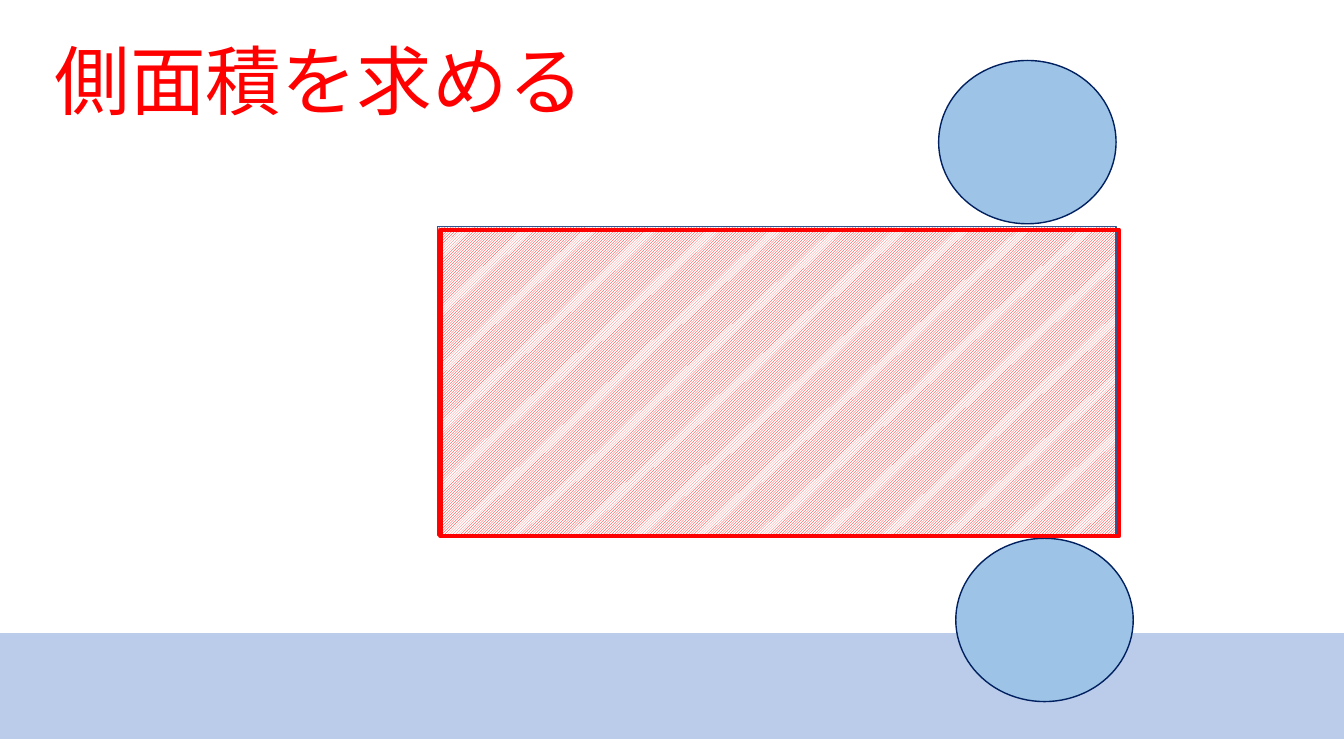
from dataclasses import dataclass

from lxml.etree import SubElement
from pptx import Presentation
from pptx.dml.color import RGBColor
from pptx.enum.dml import MSO_PATTERN
from pptx.enum.shapes import MSO_SHAPE as Shape
from pptx.enum.text import MSO_ANCHOR as Anchor, PP_ALIGN as Align
from pptx.oxml.ns import qn
from pptx.util import Inches, Pt


@dataclass(frozen=True)
class Theme:
    font: str = "Noto Sans CJK JP"
    title_size: int = 54
    accent: str = "FF0000"
    paper: str = "FFFFFF"
    band: str = "8FAADC"
    band_opacity: int = 60
    base: str = "9DC3E6"
    base_edge: str = "002060"
    side_edge: str = "325491"
    thin: float = 1
    thick: float = 3


THEME = Theme()


def rgb(color):
    return RGBColor.from_string(color)


def add_figure(slide, kind, box, fill=None, edge=None, weight=THEME.thin):
    """Draw a preset shape in box (left, top, width, height in inches)."""
    figure = slide.shapes.add_shape(kind, *map(Inches, box))
    figure.shadow.inherit = False
    if fill:
        figure.fill.solid()
        figure.fill.fore_color.rgb = rgb(fill)
    else:
        figure.fill.background()
    if edge:
        figure.line.color.rgb = rgb(edge)
        figure.line.width = Pt(weight)
    else:
        figure.line.fill.background()
    return figure


def write_text(figure, text, *, size, color, font=THEME.font,
               align=Align.CENTER, anchor=Anchor.MIDDLE):
    frame = figure.text_frame
    frame.word_wrap = True
    frame.vertical_anchor = anchor
    paragraph = frame.paragraphs[0]
    paragraph.alignment = align
    run = paragraph.add_run()
    run.text = text
    run.font.size = Pt(size)
    run.font.color.rgb = rgb(color)
    run.font.name = font
    # Japanese glyphs take the East Asian typeface
    SubElement(run.font._element, qn("a:ea"), typeface=font)


def add_band(slide, box):
    band = add_figure(slide, Shape.RECTANGLE, box, fill=THEME.band)
    color = band.fill._xPr.find(qn("a:solidFill"))[0]
    SubElement(color, qn("a:alpha"), val=str(THEME.band_opacity * 1000))


def add_title(slide, box, text):
    title = add_figure(slide, Shape.RECTANGLE, box, fill=THEME.paper)
    write_text(title, text, size=THEME.title_size, color=THEME.accent)


def add_cylinder_net(slide, box):
    """Unrolled cylinder: hatched side, two bases, highlighted outline."""
    left, top, width, height = box
    base_width, base_height = 1.76, 1.62
    gap, shift = 0.03, 0.17

    # Side surface
    side = add_figure(slide, Shape.RECTANGLE, box, edge=THEME.side_edge)
    side.fill.patterned()
    side.fill.pattern = MSO_PATTERN.LIGHT_UPWARD_DIAGONAL
    side.fill.fore_color.rgb = rgb(THEME.accent)
    side.fill.back_color.rgb = rgb(THEME.paper)

    # Top and bottom bases
    base_left = left + width - base_width
    for x, y in ((base_left, top - gap - base_height),
                 (base_left + shift, top + height + gap)):
        add_figure(slide, Shape.OVAL, (x, y, base_width, base_height),
                   fill=THEME.base, edge=THEME.base_edge)

    # Highlight around the side surface
    add_figure(slide, Shape.RECTANGLE,
               (left + gap, top + gap, width, height - 0.02),
               edge=THEME.accent, weight=THEME.thick)


def main():
    deck = Presentation()
    deck.slide_width, deck.slide_height = Inches(13.33), Inches(7.5)
    slide = deck.slides.add_slide(deck.slide_layouts[6])
    add_band(slide, (0, 6.28, 13.33, 1.05))
    add_title(slide, (0.11, 0.28, 6.11, 1.01), "側面積を求める")
    add_cylinder_net(slide, (4.34, 2.25, 6.73, 3.06))
    deck.save("out.pptx")


if __name__ == "__main__":
    main()
